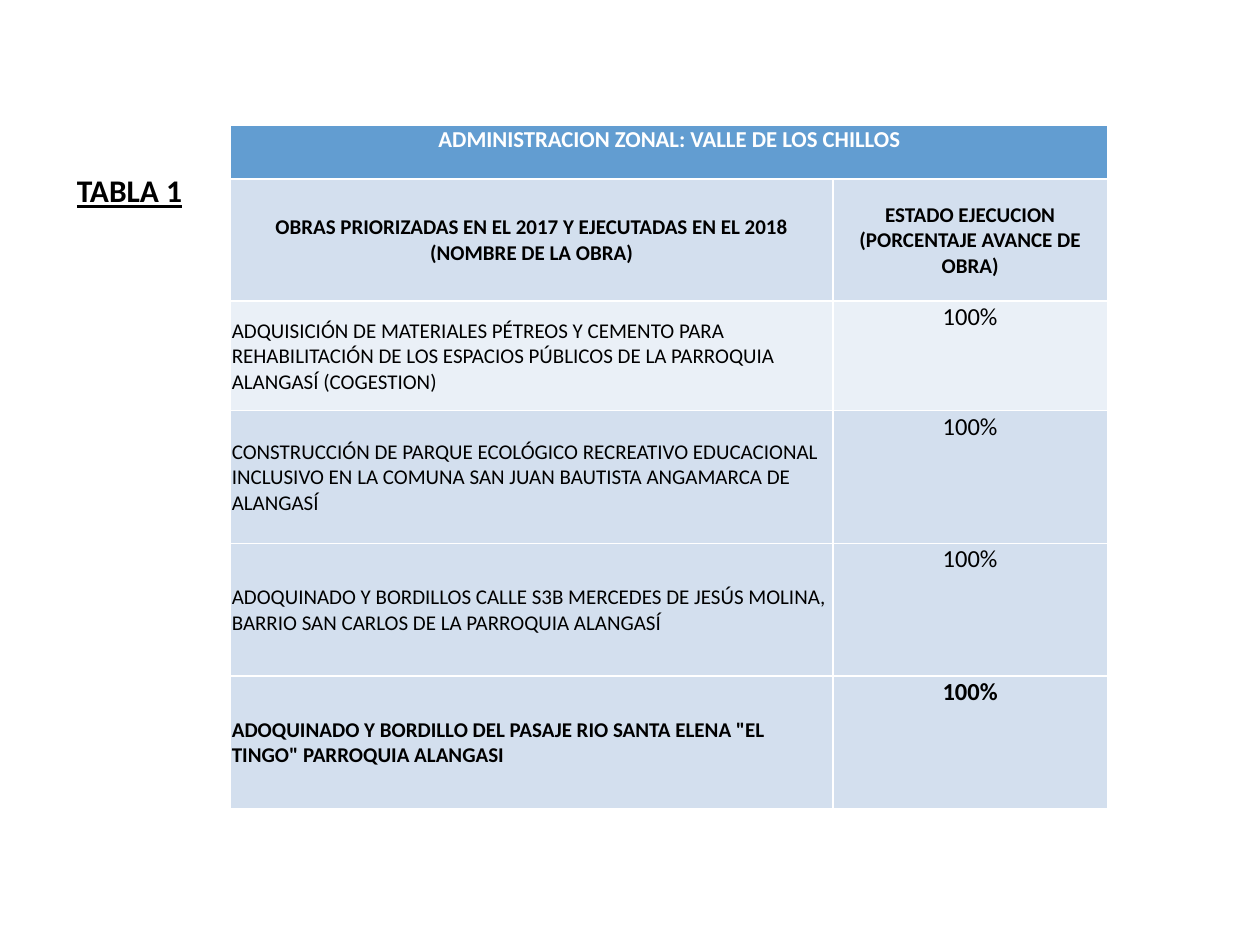
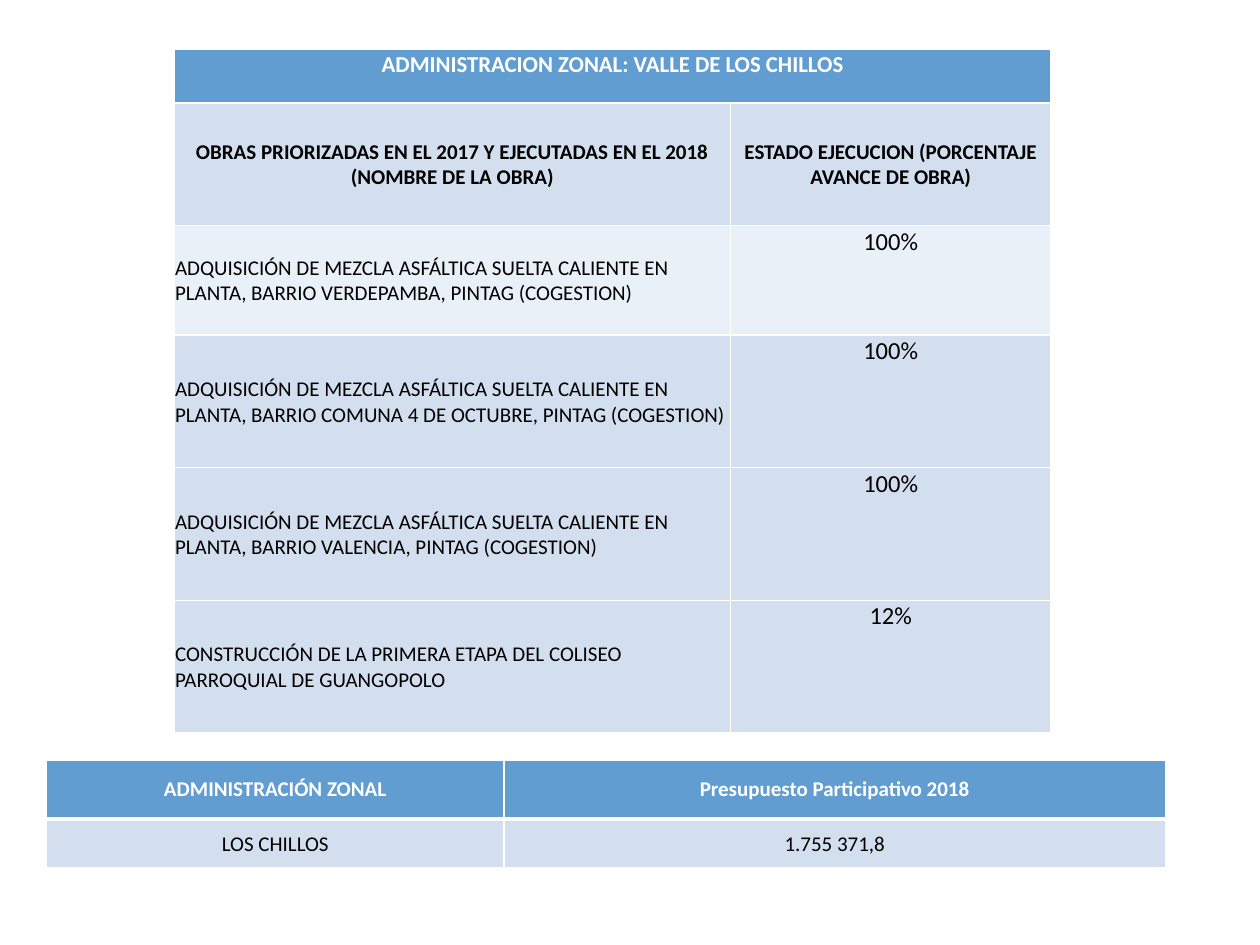
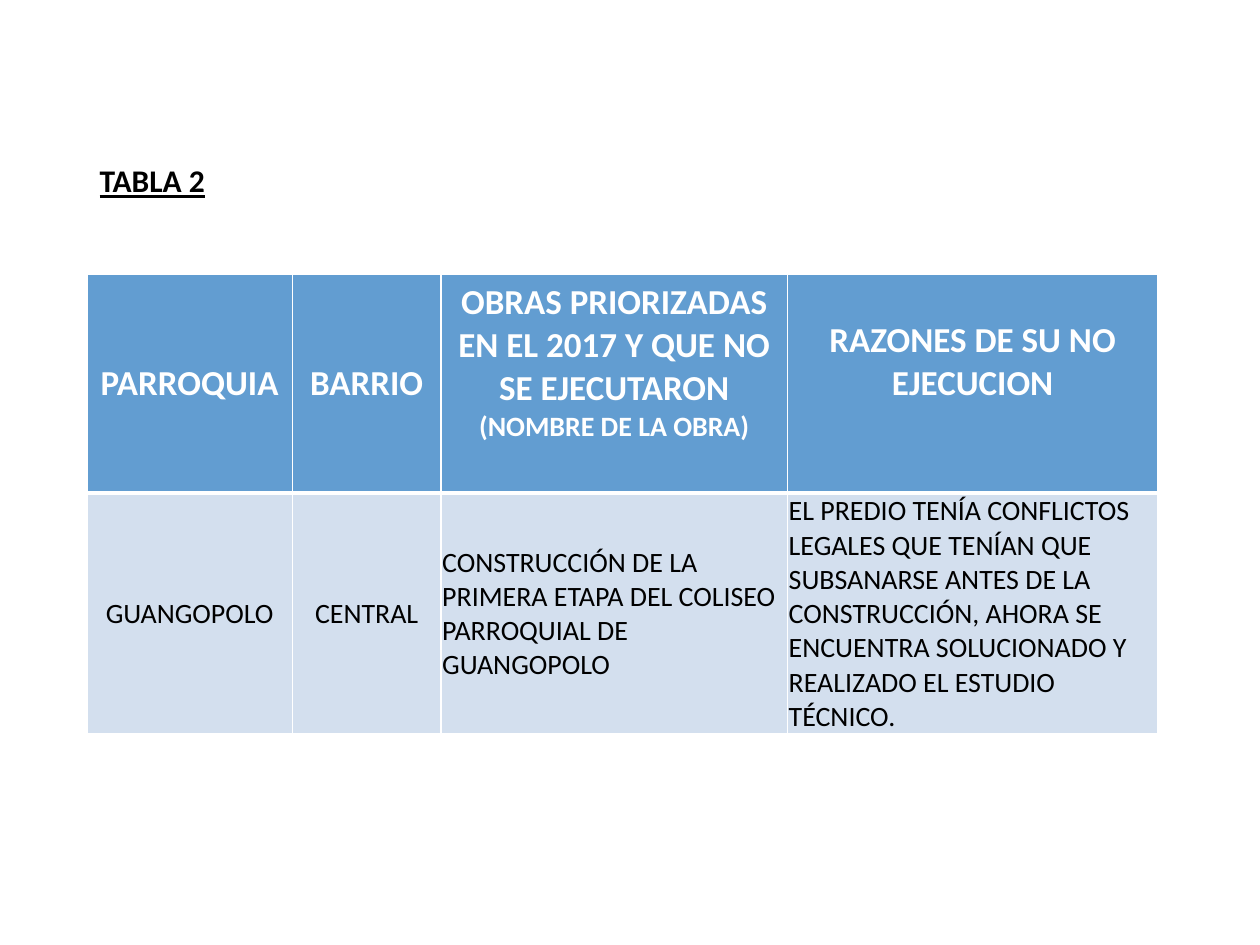
from dataclasses import dataclass, replace

from lxml.etree import SubElement
from pptx import Presentation
from pptx.dml.color import RGBColor
from pptx.enum.text import MSO_ANCHOR, MSO_AUTO_SIZE, PP_ALIGN
from pptx.oxml.ns import qn
from pptx.util import Inches, Pt


@dataclass(frozen=True)
class Theme:
    font: str = "Calibri"
    white: str = "FFFFFF"
    ink: str = "000000"
    header: str = "629DD1"
    band: str = "D3DFEE"
    pale: str = "EAF0F7"
    caption: int = 18
    zone: int = 13
    small: int = 12
    percent: int = 14
    large: int = 20
    reason: int = 16
    columns: int = 100
    rows: int = 75


THEME = Theme()


@dataclass(frozen=True)
class CellLook:
    size: int
    fill: str = THEME.band
    color: str = THEME.ink
    bold: bool = False
    align: PP_ALIGN = PP_ALIGN.CENTER
    anchor: MSO_ANCHOR = MSO_ANCHOR.MIDDLE
    insets: tuple = (0.01, 0.01, 0.01, 0)


ZONE = CellLook(THEME.zone, THEME.header, THEME.white, True, anchor=MSO_ANCHOR.TOP)
HEADING = CellLook(THEME.small, bold=True)
WORK = CellLook(THEME.small, align=PP_ALIGN.LEFT)
PERCENT = CellLook(THEME.percent, anchor=MSO_ANCHOR.TOP)
BUDGET_HEAD = CellLook(THEME.small, THEME.header, THEME.white, True, insets=(0.1, 0.05, 0.1, 0.05))
BUDGET = CellLook(THEME.small)
PENDING_HEAD = replace(BUDGET_HEAD, size=THEME.large)
PENDING_RAISED = replace(PENDING_HEAD, insets=(0.1, 0.05, 0.1, 0.39))
PLACE = CellLook(THEME.reason)
REASON = replace(PLACE, align=PP_ALIGN.LEFT)


class Deck:
    def __init__(self, theme):
        self.theme = theme
        self.file = Presentation()
        self.file.slide_width, self.file.slide_height = Inches(10), Inches(7.5)
        self.slide = None

    def x(self, columns):
        return round(self.file.slide_width * columns / self.theme.columns)

    def y(self, rows):
        return round(self.file.slide_height * rows / self.theme.rows)

    def start(self, caption=None, left=0, top=0):
        layout = self.file.slide_layouts[5 if caption else 6]
        self.slide = self.file.slides.add_slide(layout)
        if caption:
            self.caption(caption, left, top)

    def caption(self, text, left, top):
        title = self.slide.shapes.title
        title.left, title.top = self.x(left), self.y(top)
        title.width, title.height = self.x(48), self.y(4)
        frame = title.text_frame
        frame.auto_size = MSO_AUTO_SIZE.NONE
        frame.vertical_anchor = MSO_ANCHOR.TOP
        frame.paragraphs[0].alignment = PP_ALIGN.LEFT
        run = self.run(frame.paragraphs[0], text, self.theme.caption, self.theme.ink, True)
        run.font.underline = True

    def run(self, paragraph, text, size, color, bold):
        run = paragraph.add_run()
        run.text = text
        run.font.name = self.theme.font
        run.font.size = Pt(size)
        run.font.bold = bold
        run.font.color.rgb = RGBColor.from_string(color)
        return run

    def borders(self, cell, top, bottom):
        properties = cell._tc.get_or_add_tcPr()
        for side, width in zip("LRTB", (1, 1, top, bottom)):
            line = SubElement(properties, qn(f"a:ln{side}"), w=str(Pt(width)))
            paint = SubElement(line, qn("a:solidFill"))
            SubElement(paint, qn("a:srgbClr"), val=self.theme.white)

    def cell(self, cell, content, look, top, bottom):
        self.borders(cell, top, bottom)
        cell.fill.solid()
        cell.fill.fore_color.rgb = RGBColor.from_string(look.fill)
        cell.vertical_anchor = look.anchor
        cell.margin_left, cell.margin_top, cell.margin_right, cell.margin_bottom = map(Inches, look.insets)
        paragraph = cell.text_frame.paragraphs[0]
        paragraph.alignment = look.align
        pieces = [(content, look.size)] if isinstance(content, str) else content
        for text, size in pieces:
            self.run(paragraph, text, size, look.color, look.bold)

    def table(self, left, top, widths, heights, lines, rule):
        frame = self.slide.shapes.add_table(
            len(heights), len(widths), self.x(left), self.y(top),
            self.x(sum(widths)), self.y(sum(heights)))
        table = frame.table
        table.first_row = table.horz_banding = False
        for column, width in zip(table.columns, widths):
            column.width = self.x(width)
        for row, height in zip(table.rows, heights):
            row.height = self.y(height)
        for r, line in enumerate(lines):
            if len(line) < len(widths):
                table.cell(r, 0).merge(table.cell(r, len(widths) - 1))
            for c, (content, look) in enumerate(line):
                self.cell(table.cell(r, c), content, look,
                          rule if r == 1 else 1, rule if r == 0 else 1)

    def works(self, left, top, widths, works):
        lines = [
            [("ADMINISTRACION ZONAL: VALLE DE LOS CHILLOS", ZONE)],
            [("OBRAS PRIORIZADAS EN EL 2017 Y EJECUTADAS EN EL 2018 (NOMBRE DE LA OBRA)", HEADING),
             ("ESTADO EJECUCION (PORCENTAJE AVANCE DE OBRA)", HEADING)],
        ]
        for index, (name, progress, bold) in enumerate(works):
            fill = self.theme.band if index else self.theme.pale
            lines.append([(name, replace(WORK, fill=fill, bold=bold)),
                          (progress, replace(PERCENT, fill=fill, bold=bold))])
        self.table(left, top, widths, [4.3, 9.7, 8.7] + [10.53] * 3, lines, 1.5)


def main():
    deck = Deck(THEME)

    deck.start("TABLA 1", 5.1, 13.1)
    deck.works(18.3, 9.9, [47.8, 21.8], [
        ("ADQUISICIÓN DE MATERIALES PÉTREOS Y CEMENTO PARA REHABILITACIÓN DE LOS ESPACIOS PÚBLICOS "
         "DE LA PARROQUIA ALANGASÍ (COGESTION)", "100%", False),
        ("CONSTRUCCIÓN DE PARQUE ECOLÓGICO RECREATIVO EDUCACIONAL INCLUSIVO EN LA COMUNA "
         "SAN JUAN BAUTISTA ANGAMARCA DE ALANGASÍ", "100%", False),
        ("ADOQUINADO Y BORDILLOS CALLE S3B MERCEDES DE JESÚS MOLINA, BARRIO SAN CARLOS "
         "DE LA PARROQUIA ALANGASÍ", "100%", False),
        ('ADOQUINADO Y BORDILLO DEL PASAJE RIO SANTA ELENA "EL TINGO" PARROQUIA ALANGASI', "100%", True),
    ])

    coliseum = "CONSTRUCCIÓN DE LA PRIMERA ETAPA DEL COLISEO PARROQUIAL DE GUANGOPOLO"
    asphalt = "ADQUISICIÓN DE MEZCLA ASFÁLTICA SUELTA CALIENTE EN PLANTA, BARRIO {}, PINTAG (COGESTION)"
    districts = ["VERDEPAMBA", "COMUNA 4 DE OCTUBRE", "VALENCIA"]
    deck.start()
    deck.works(13.8, 3.9, [44.2, 25.4],
               [(asphalt.format(district), "100%", False) for district in districts]
               + [(coliseum, "12%", False)])
    deck.table(3.7, 60.3, [36.3, 52.5], [4.7, 3.9], [
        [("ADMINISTRACIÓN ZONAL", BUDGET_HEAD), ("Presupuesto Participativo 2018", BUDGET_HEAD)],
        [("LOS CHILLOS", BUDGET), ("1.755 371,8", BUDGET)],
    ], 3)

    deck.start("TABLA 2", 6.9, 12.3)
    deck.table(6.9, 21.8, [16.3, 11.8, 27.5, 29.4], [17.3, 19.1], [
        [("PARROQUIA", PENDING_HEAD),
         ("BARRIO", PENDING_HEAD),
         ([("OBRAS PRIORIZADAS EN EL 2017 Y QUE NO SE EJECUTARON ", THEME.large),
           ("(NOMBRE DE LA OBRA)", THEME.reason)], PENDING_RAISED),
         ("RAZONES DE SU NO EJECUCION", PENDING_RAISED)],
        [("GUANGOPOLO", PLACE),
         ("CENTRAL", PLACE),
         (coliseum, REASON),
         ("EL PREDIO TENÍA CONFLICTOS LEGALES QUE TENÍAN QUE SUBSANARSE ANTES DE LA CONSTRUCCIÓN, "
          "AHORA SE ENCUENTRA SOLUCIONADO Y REALIZADO EL ESTUDIO TÉCNICO.", REASON)],
    ], 3)

    deck.file.save("out.pptx")


if __name__ == "__main__":
    main()
